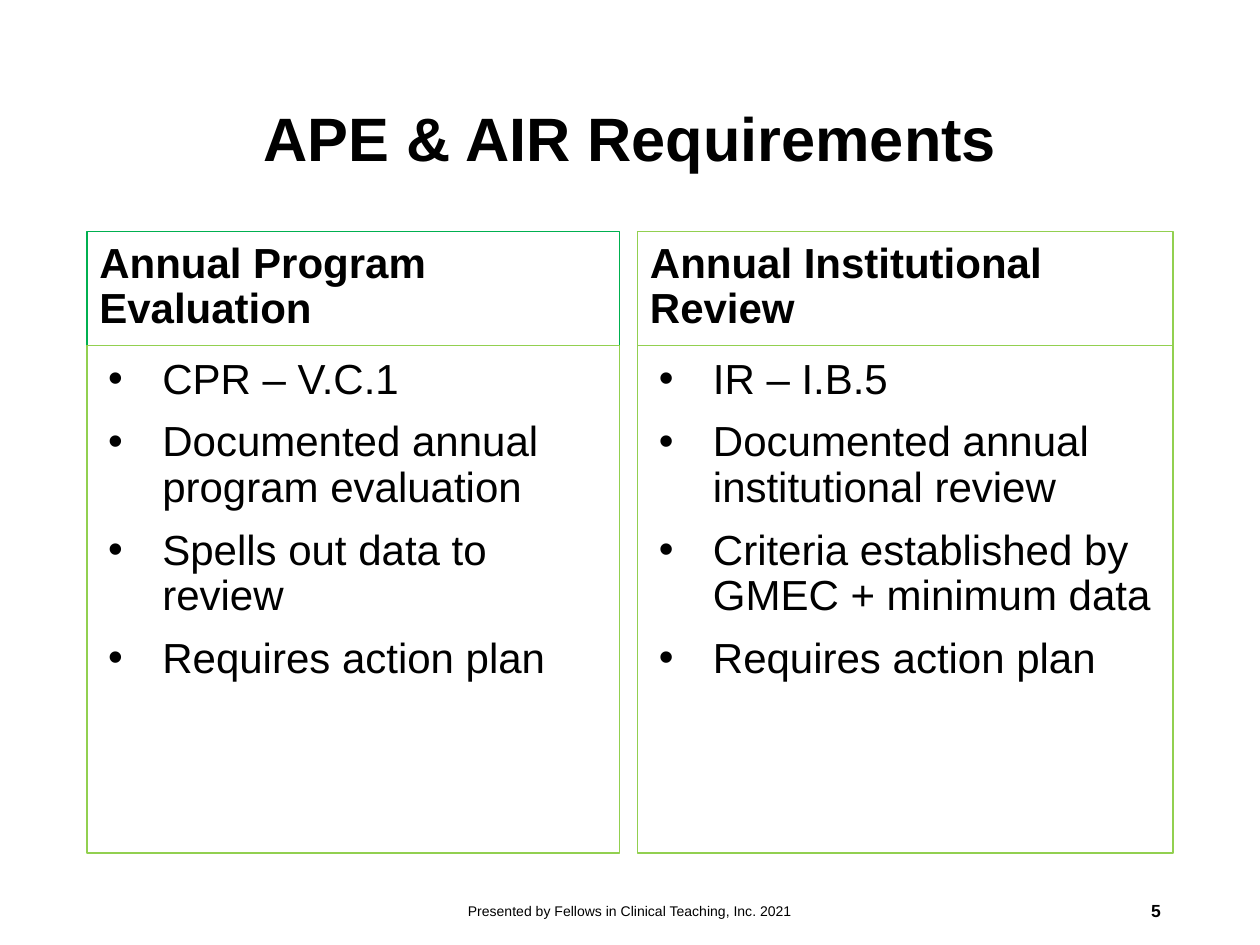
from collections import namedtuple

from lxml import etree
from pptx import Presentation
from pptx import util as u
from pptx.dml.color import RGBColor
from pptx.enum import shapes, text
from pptx.oxml.ns import qn

COLORS = {"ink": "000000", "paper": "FFFFFF", "green": "00B050", "lime": "92D050"}
FONT = "Arial"
Box = namedtuple("Box", "left top width height")

# Grid in inches: two columns, and the rows of the page
COLUMNS = [(0.69, 4.23), (5.06, 4.25)]
ROWS = {"title": (0.4, 1.45), "panels": (1.84, 4.93), "footer": (7.03, 0.4)}
HEADING_HEIGHT = 0.9
LEFT = COLUMNS[0][0]
WIDTH = sum(COLUMNS[1]) - LEFT

PANELS = [
    ("Annual Program Evaluation", "green",
     ["CPR – V.C.1", "Documented annual program evaluation",
      "Spells out data to review", "Requires action plan"]),
    ("Annual Institutional Review", "lime",
     ["IR – I.B.5", "Documented annual institutional review",
      "Criteria established by GMEC + minimum data", "Requires action plan"]),
]


def color(name):
    return RGBColor.from_string(COLORS[name])


def inches(box):
    return [u.Inches(length) for length in box]


def fill_text(shape, lines, size, bold=False, align=text.PP_ALIGN.LEFT,
              anchor=text.MSO_ANCHOR.MIDDLE, inset=0.1, spacing=None, bullets=False):
    frame = shape.text_frame
    frame.word_wrap = True
    frame.vertical_anchor = anchor
    frame.margin_left = frame.margin_right = u.Inches(0.1)
    frame.margin_top = frame.margin_bottom = u.Inches(inset)
    frame.text = "\n".join(lines)
    for index, para in enumerate(frame.paragraphs):
        para.alignment = align
        para.line_spacing = spacing
        if index:
            para.space_before = u.Pt(10)
        if bullets:
            add_bullet(para)
        for span in para.runs:
            span.font.name = FONT
            span.font.size = u.Pt(size)
            span.font.bold = bold
            span.font.color.rgb = color("ink")


def add_bullet(para):
    settings = para._p.get_or_add_pPr()
    settings.set("marL", str(u.Inches(0.5)))
    settings.set("indent", str(u.Inches(-0.43)))
    etree.SubElement(settings, qn("a:buFont")).set("typeface", FONT)
    etree.SubElement(settings, qn("a:buChar")).set("char", "•")


def add_text(page, box, line, size, **style):
    fill_text(page.shapes.add_textbox(*inches(box)), [line], size, **style)


def add_frame(page, box, line_color):
    frame = page.shapes.add_shape(shapes.MSO_SHAPE.RECTANGLE, *inches(box))
    frame.shadow.inherit = False
    frame.fill.background()
    frame.line.color.rgb = color(line_color)
    frame.line.width = u.Pt(0.75)
    return frame


def add_panel(page, box, heading, heading_color, points):
    """Place a framed heading above a framed bullet list."""
    top = add_frame(page, box._replace(height=HEADING_HEIGHT), heading_color)
    fill_text(top, [heading], 24, bold=True, anchor=text.MSO_ANCHOR.BOTTOM, spacing=0.9)
    body = add_frame(page, box._replace(top=box.top + HEADING_HEIGHT,
                                        height=box.height - HEADING_HEIGHT), "lime")
    fill_text(body, points, 24, anchor=text.MSO_ANCHOR.TOP, spacing=0.9, bullets=True)


def add_footer(page, box, credit, number):
    credit_width, number_width = 3.38, 0.91
    center = box._replace(left=box.left + (box.width - credit_width) / 2,
                          width=credit_width)
    right = box._replace(left=box.left + box.width - number_width, width=number_width)
    add_text(page, right, number, 10, bold=True, align=text.PP_ALIGN.RIGHT, inset=0.05)
    add_text(page, center, credit, 8, align=text.PP_ALIGN.CENTER, inset=0.05)


def main():
    deck = Presentation()
    deck.slide_width, deck.slide_height = u.Inches(10), u.Inches(7.5)
    page = deck.slides.add_slide(deck.slide_layouts[6])
    page.background.fill.solid()
    page.background.fill.fore_color.rgb = color("paper")

    rows = {name: Box(LEFT, top, WIDTH, height) for name, (top, height) in ROWS.items()}
    add_text(page, rows["title"], "APE & AIR Requirements", 35, bold=True,
             align=text.PP_ALIGN.CENTER, spacing=0.9)
    for (left, width), panel in zip(COLUMNS, PANELS):
        add_panel(page, rows["panels"]._replace(left=left, width=width), *panel)
    add_footer(page, rows["footer"],
               "Presented by Fellows in Clinical Teaching, Inc. 2021", "5")
    deck.save("out.pptx")


if __name__ == "__main__":
    main()
